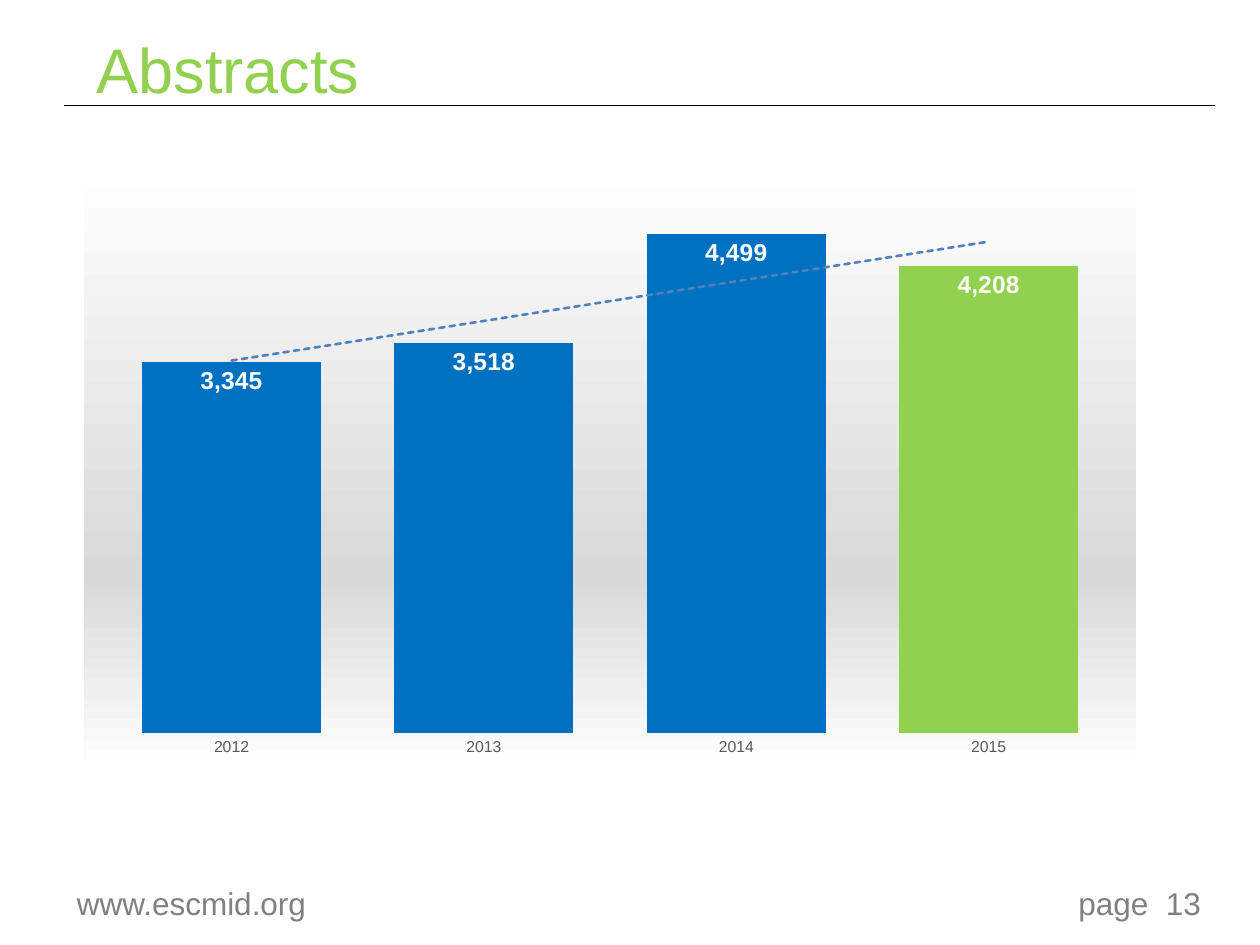
"""Build the slide with the number of abstracts per year."""
from lxml import etree
from pptx import Presentation
from pptx.chart.data import CategoryChartData
from pptx.dml.color import RGBColor
from pptx.enum.chart import XL_CHART_TYPE, XL_LABEL_POSITION, XL_TICK_MARK
from pptx.enum.shapes import MSO_CONNECTOR
from pptx.enum.text import MSO_ANCHOR
from pptx.oxml import parse_xml
from pptx.oxml.ns import qn
from pptx.util import Cm, Pt

COLUMNS = XL_CHART_TYPE.COLUMN_CLUSTERED
INSIDE_END = XL_LABEL_POSITION.INSIDE_END
NO_TICK = XL_TICK_MARK.NONE
STRAIGHT = MSO_CONNECTOR.STRAIGHT
MIDDLE, TOP = MSO_ANCHOR.MIDDLE, MSO_ANCHOR.TOP
FONT = "Arial"
BLUE, GREEN, GREY = "0070C0", "92D050", "808080"
NAMESPACES = (
    'xmlns:c="http://schemas.openxmlformats.org/drawingml/2006/chart" '
    'xmlns:a="http://schemas.openxmlformats.org/drawingml/2006/main"'
)


def style(font, size, color, bold=False):
    """Set the typeface, size, colour and weight of a font."""
    font.name, font.size, font.bold = FONT, Pt(size), bold
    font.color.rgb = RGBColor.from_string(color)


prs = Presentation()
prs.slide_width, prs.slide_height = Cm(25.4), Cm(19.05)
slide = prs.slides.add_slide(prs.slide_layouts[6])

rule = slide.shapes.add_connector(STRAIGHT, Cm(1.3), Cm(2.13), Cm(24.5), Cm(2.13))
rule.line.color.rgb = RGBColor.from_string("000000")
rule.line.width = Pt(0.75)
etree.SubElement(rule.element.spPr, qn("a:effectLst"))

for words, left, top, width, height, size, color, anchor in (
    ("page  13", 21.49, 17.7, 3.6, 1.02, 18, GREY, TOP),
    ("www.escmid.org", 1.3, 17.7, 8.8, 1.02, 18, GREY, TOP),
    ("Abstracts", 1.7, 0.33, 20.1, 2.1, 36, GREEN, MIDDLE),
):
    frame = slide.shapes.add_textbox(Cm(left), Cm(top), Cm(width), Cm(height)).text_frame
    frame.word_wrap = True
    frame.vertical_anchor = anchor
    run = frame.paragraphs[0].add_run()
    run.text = words
    style(run.font, size, color)

abstracts = CategoryChartData(number_format="#,##0")
abstracts.categories = ["2012", "2013", "2014", "2015"]
abstracts.add_series("Series 1", (3345, 3518, 4499, 4208))
chart = slide.shapes.add_chart(
    COLUMNS, Cm(1.7), Cm(3.35), Cm(21.2), Cm(12.17), abstracts
).chart
chart.has_legend = chart.has_title = False
style(chart.font, 10, "000000")

years = chart.category_axis
years.major_tick_mark = years.minor_tick_mark = NO_TICK
years.format.line.fill.background()
style(years.tick_labels.font, 9, "595959")

counts = chart.value_axis
counts.minimum_scale, counts.maximum_scale = 0, 5000
counts.has_major_gridlines = counts.visible = False

plot = chart.plots[0]
plot.gap_width = 41
plot.vary_by_categories = False
series = plot.series[0]
for index, color in enumerate((BLUE, BLUE, BLUE, GREEN)):
    bar = series.points[index].format.fill
    bar.solid()
    bar.fore_color.rgb = RGBColor.from_string(color)

labels = series.data_labels
labels.show_value = True
labels.position = INSIDE_END
labels.number_format, labels.number_format_is_linked = "#,##0", False
style(labels.font, 14, "FFFFFF", bold=True)

trend = parse_xml(
    f'<c:trendline {NAMESPACES}><c:spPr><a:ln w="19050" cap="rnd"><a:solidFill>'
    '<a:srgbClr val="4F81BD"/></a:solidFill><a:prstDash val="sysDash"/></a:ln></c:spPr>'
    '<c:trendlineType val="linear"/><c:dispRSqr val="0"/><c:dispEq val="0"/></c:trendline>'
)
series._element.find(qn("c:cat")).addprevious(trend)

stops = "".join(
    f'<a:gs pos="{percent * 1000}"><a:srgbClr val="{color}"/></a:gs>'
    for percent, color in ((0, "FFFFFF"), (68, "D9D9D9"), (100, "FFFFFF"))
)
background = parse_xml(
    f'<c:spPr {NAMESPACES}><a:gradFill><a:gsLst>{stops}</a:gsLst>'
    '<a:lin ang="5400000" scaled="0"/></a:gradFill><a:ln><a:noFill/></a:ln></c:spPr>'
)
chart._chartSpace.find(qn("c:chart")).addnext(background)

bounds = "".join(
    f'<c:{tag} val="{value}"/>'
    for tag, value in (
        ("layoutTarget", "inner"), ("xMode", "edge"), ("yMode", "edge"),
        ("x", 0.02), ("y", 0.02), ("w", 0.96), ("h", 0.92),
    )
)
plot_area = chart._chartSpace.find(".//" + qn("c:plotArea"))
for default_layout in plot_area.findall(qn("c:layout")):
    plot_area.remove(default_layout)
plot_area.insert(0, parse_xml(
    f"<c:layout {NAMESPACES}><c:manualLayout>{bounds}</c:manualLayout></c:layout>"
))

prs.save("out.pptx")
